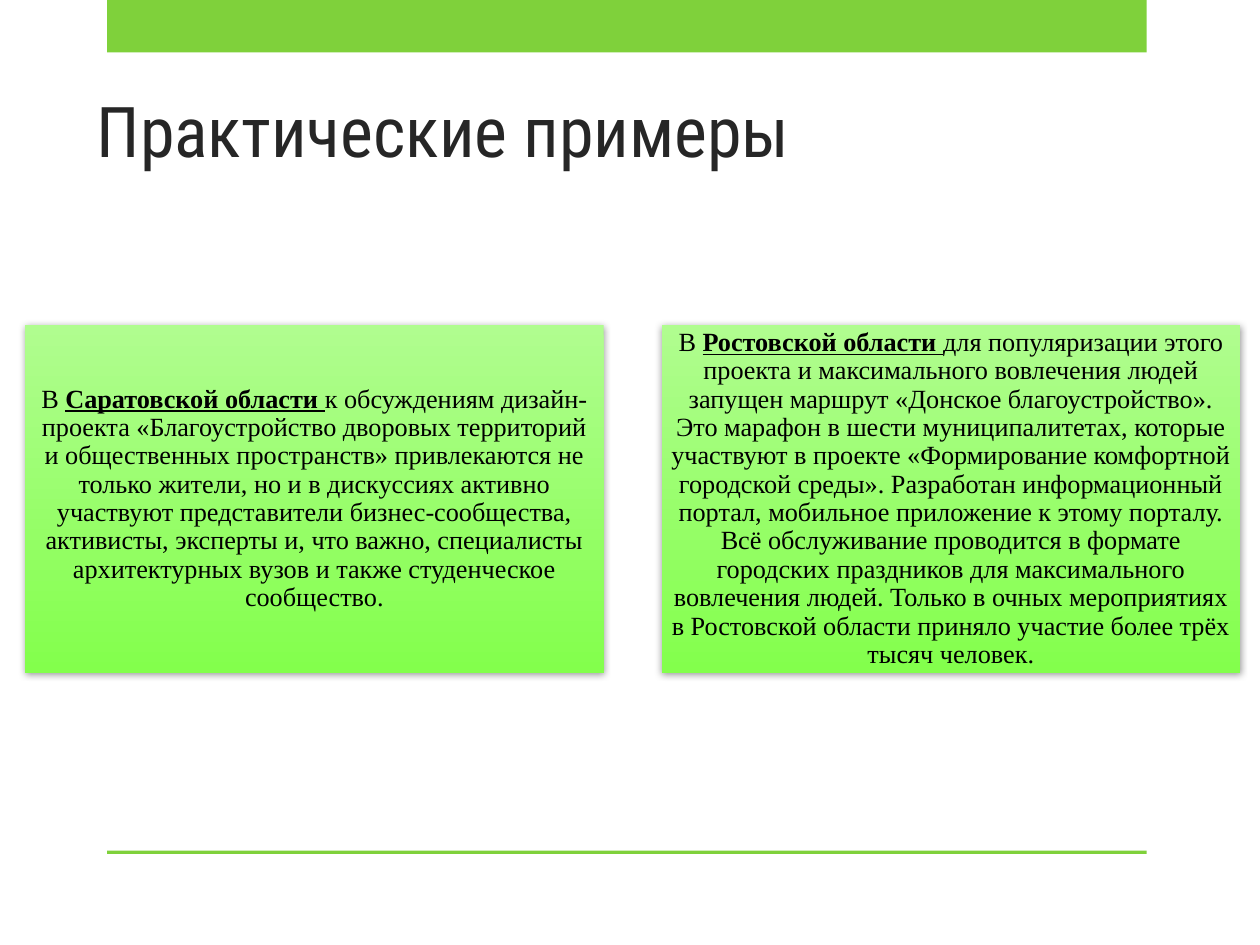
from lxml import etree
from pptx import Presentation
from pptx.dml.color import RGBColor
from pptx.enum import shapes, text
from pptx.oxml import ns
from pptx.util import Pt

GREEN = RGBColor(0x7F, 0xD1, 0x3B)
CARD_TOP_GREEN = RGBColor(0xB0, 0xFD, 0x8F)
CARD_BOTTOM_GREEN = RGBColor(0x83, 0xFF, 0x4C)
DARK = RGBColor(0x26, 0x26, 0x26)
BLACK = RGBColor(0, 0, 0)

# Each example: opening word, region, description
EXAMPLES = [
    ("В ", "Саратовской области ",
     "к обсуждениям дизайн-проекта «Благоустройство дворовых территорий "
     "и общественных пространств» привлекаются не только жители, но и в дискуссиях "
     "активно участвуют представители бизнес-сообщества, активисты, эксперты и, "
     "что важно, специалисты архитектурных вузов и также студенческое сообщество."),
    ("В ", "Ростовской области ",
     "для популяризации этого проекта и максимального вовлечения людей запущен "
     "маршрут «Донское благоустройство». Это марафон в шести муниципалитетах, "
     "которые участвуют в проекте «Формирование комфортной городской среды». "
     "Разработан информационный портал, мобильное приложение к этому порталу. "
     "Всё обслуживание проводится в формате городских праздников для максимального "
     "вовлечения людей. Только в очных мероприятиях в Ростовской области приняло "
     "участие более трёх тысяч человек."),
]


class Deck:
    title_font, title_size = "Roboto Condensed", Pt(40)
    body_font, body_size = "Times New Roman", Pt(15)
    card_inset = Pt(4.2)

    def __init__(self, slide):
        self.s = slide

    def rect(self, x, y, w, h):
        sp = self.s.shapes.add_shape(
            shapes.MSO_SHAPE.RECTANGLE, Pt(x), Pt(y), Pt(w), Pt(h))
        sp.shadow.inherit = False
        sp.line.fill.background()
        return sp

    def bar(self, x, y, w, h):
        sp = self.rect(x, y, w, h)
        sp.fill.solid()
        sp.fill.fore_color.rgb = GREEN

    def title(self, x, y, w, h, words):
        tf = self.s.shapes.add_textbox(Pt(x), Pt(y), Pt(w), Pt(h)).text_frame
        tf.word_wrap = True
        tf.vertical_anchor = text.MSO_ANCHOR.BOTTOM
        p = tf.paragraphs[0]
        p.text = words
        p.font.name, p.font.size = self.title_font, self.title_size
        p.font.color.rgb = DARK

    def soft_shadow(self, sp):
        effects = sp._element.spPr.find(ns.qn("a:effectLst"))
        shadow = etree.SubElement(
            effects, ns.qn("a:outerShdw"), blurRad=str(Pt(4)), dist=str(Pt(1)),
            dir=str(88 * 60000), rotWithShape="0")
        color = etree.SubElement(shadow, ns.qn("a:srgbClr"), val=str(BLACK))
        etree.SubElement(color, ns.qn("a:alpha"), val="40000")

    def card(self, x, y, w, h, opening, region, description):
        sp = self.rect(x, y, w, h)
        sp.fill.gradient()
        sp.fill.gradient_angle = 270
        for stop, color in zip(sp.fill.gradient_stops,
                               (CARD_TOP_GREEN, CARD_BOTTOM_GREEN)):
            stop.color.rgb = color
        self.soft_shadow(sp)

        tf = sp.text_frame
        tf.word_wrap = True
        tf.vertical_anchor = text.MSO_ANCHOR.MIDDLE
        tf.margin_left = tf.margin_right = self.card_inset
        tf.margin_top = tf.margin_bottom = self.card_inset
        p = tf.paragraphs[0]
        p.alignment = text.PP_ALIGN.CENTER
        p.line_spacing = 0.9
        p.font.name, p.font.size = self.body_font, self.body_size
        p.font.color.rgb = BLACK
        for words in (opening, region, description):
            r = p.add_run()
            r.text = words
            if words == region:
                r.font.bold = r.font.underline = True


def main():
    prs = Presentation()
    prs.slide_width, prs.slide_height = Pt(720), Pt(540)
    deck = Deck(prs.slides.add_slide(prs.slide_layouts[6]))

    # Top band and bottom rule
    deck.bar(61.2, 0, 594, 30)
    deck.bar(61.2, 486, 594, 2)

    # Title
    deck.title(48.2, -24.5, 534, 126, "Практические примеры")

    # Two example cards, side by side
    left, top, width, height, gap = 14.4, 185.8, 330.5, 198.5, 33.2
    for i, example in enumerate(EXAMPLES):
        deck.card(left + i * (width + gap), top, width, height, *example)

    prs.save("out.pptx")


if __name__ == "__main__":
    main()
